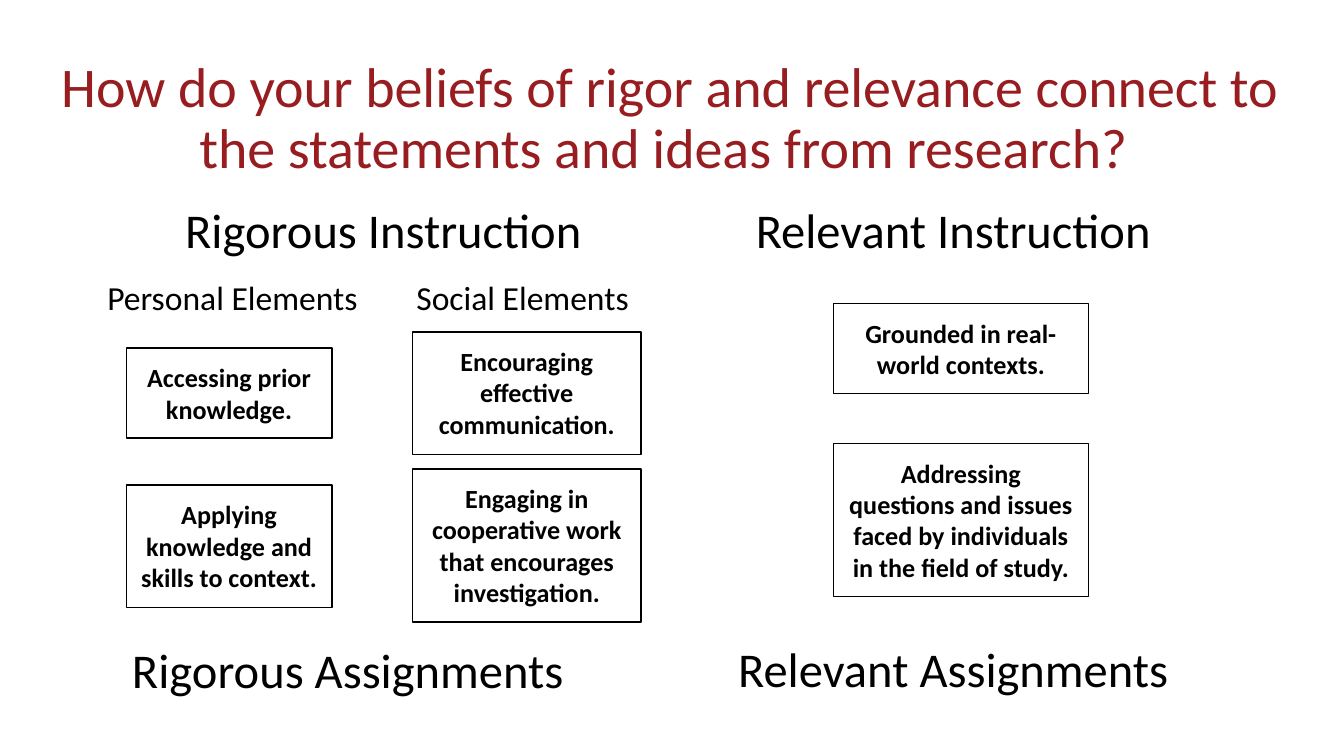
from dataclasses import dataclass

from lxml import etree
from pptx import Presentation
from pptx.dml.color import RGBColor
from pptx.enum import shapes, text
from pptx.oxml.ns import qn
from pptx.util import Inches, Pt

COLORS = {"title": "971D20", "ink": "000000", "paper": "FFFFFF"}
FONT = "Calibri"
CENTER = text.PP_ALIGN.CENTER


@dataclass(frozen=True)
class Heading:
    wording: str
    size: int = 26
    space_before: float = 0
    right_indent: float = 0
    tabs: tuple[float, ...] = ()


@dataclass(frozen=True)
class Panel:
    left: float
    width: float
    headings: tuple[Heading, ...]


@dataclass(frozen=True)
class Column:
    left: float
    width: float


@dataclass(frozen=True)
class Statement:
    wording: str
    column: Column
    top: float
    height: float


TITLE = "How do your beliefs of rigor and relevance connect to the statements and ideas from research? "

PANELS = [
    Panel(0.58, 4.6, (
        Heading("Rigorous Instruction", right_indent=0.05),
        Heading("\tPersonal Elements\tSocial Elements", 18, 10, tabs=(0.12, 2.42)),
        Heading("Rigorous Assignments", space_before=173, right_indent=0.58),
    )),
    Panel(4.91, 4.37, (
        Heading("Relevant Instruction"),
        Heading("Relevant Assignments", space_before=204),
    )),
]

PERSONAL = Column(0.94, 1.53)
SOCIAL = Column(3.07, 1.7)
RELEVANT = Column(6.2, 1.9)

STATEMENTS = [
    Statement("Accessing prior knowledge.", PERSONAL, 2.59, 0.67),
    Statement("Encouraging effective communication.", SOCIAL, 2.47, 0.91),
    Statement("Applying knowledge and skills to context.", PERSONAL, 3.61, 0.91),
    Statement("Engaging in cooperative work that encourages investigation.", SOCIAL, 3.49, 1.14),
    Statement("Grounded in real-world contexts.", RELEVANT, 2.26, 0.67),
    Statement(
        "Addressing questions and issues faced by individuals in the field of study.",
        RELEVANT, 3.3, 1.14,
    ),
]


def color(name: str) -> RGBColor:
    return RGBColor.from_string(COLORS[name])


def prepare_frame(shape, anchor, inset: float = 0.1):
    frame = shape.text_frame
    frame.word_wrap = True
    frame.vertical_anchor = anchor
    frame.margin_left = frame.margin_right = Inches(0.1)
    frame.margin_top = frame.margin_bottom = Inches(inset)
    return frame


def add_run(paragraph, wording: str, size: int, ink: str = "ink", bold: bool = False) -> None:
    run = paragraph.add_run()
    run.text = wording
    run.font.name = FONT
    run.font.size = Pt(size)
    run.font.bold = bold
    run.font.color.rgb = color(ink)


def draw_title(slide, wording: str) -> None:
    shape = slide.shapes.add_textbox(Inches(0.33), Inches(0.3), Inches(9.31), Inches(1.09))
    paragraph = prepare_frame(shape, text.MSO_ANCHOR.BOTTOM, 0.05).paragraphs[0]
    paragraph.alignment = CENTER
    paragraph.line_spacing = 0.9
    add_run(paragraph, wording, 30, "title")


def write_heading(paragraph, heading: Heading) -> None:
    paragraph.alignment = text.PP_ALIGN.LEFT if heading.tabs else CENTER
    if heading.space_before:
        paragraph.space_before = Pt(heading.space_before)
    properties = paragraph._p.get_or_add_pPr()
    if heading.right_indent:
        properties.set("marR", str(Inches(heading.right_indent)))
    if heading.tabs:
        tab_list = etree.SubElement(properties, qn("a:tabLst"))
        for position in heading.tabs:
            etree.SubElement(tab_list, qn("a:tab"), pos=str(Inches(position)), algn="l")
    add_run(paragraph, heading.wording, heading.size)


def draw_panel(slide, panel: Panel) -> None:
    shape = slide.shapes.add_textbox(
        Inches(panel.left), Inches(1.39), Inches(panel.width), Inches(4.07)
    )
    frame = prepare_frame(shape, text.MSO_ANCHOR.TOP)
    for index, heading in enumerate(panel.headings):
        paragraph = frame.add_paragraph() if index else frame.paragraphs[0]
        write_heading(paragraph, heading)


def draw_statement(slide, statement: Statement) -> None:
    shape = slide.shapes.add_shape(
        shapes.MSO_SHAPE.RECTANGLE,
        Inches(statement.column.left), Inches(statement.top),
        Inches(statement.column.width), Inches(statement.height),
    )
    shape.shadow.inherit = False
    shape.fill.solid()
    shape.fill.fore_color.rgb = color("paper")
    shape.line.color.rgb = color("ink")
    shape.line.width = Pt(0.75)
    paragraph = prepare_frame(shape, text.MSO_ANCHOR.TOP).paragraphs[0]
    paragraph.alignment = CENTER
    add_run(paragraph, statement.wording, 14, bold=True)


def main() -> None:
    presentation = Presentation()
    presentation.slide_width = Inches(10)
    presentation.slide_height = Inches(10 * 9 / 16)
    slide = presentation.slides.add_slide(presentation.slide_layouts[6])
    draw_title(slide, TITLE)
    for panel in PANELS:
        draw_panel(slide, panel)
    for statement in STATEMENTS:
        draw_statement(slide, statement)
    presentation.save("out.pptx")


if __name__ == "__main__":
    main()
